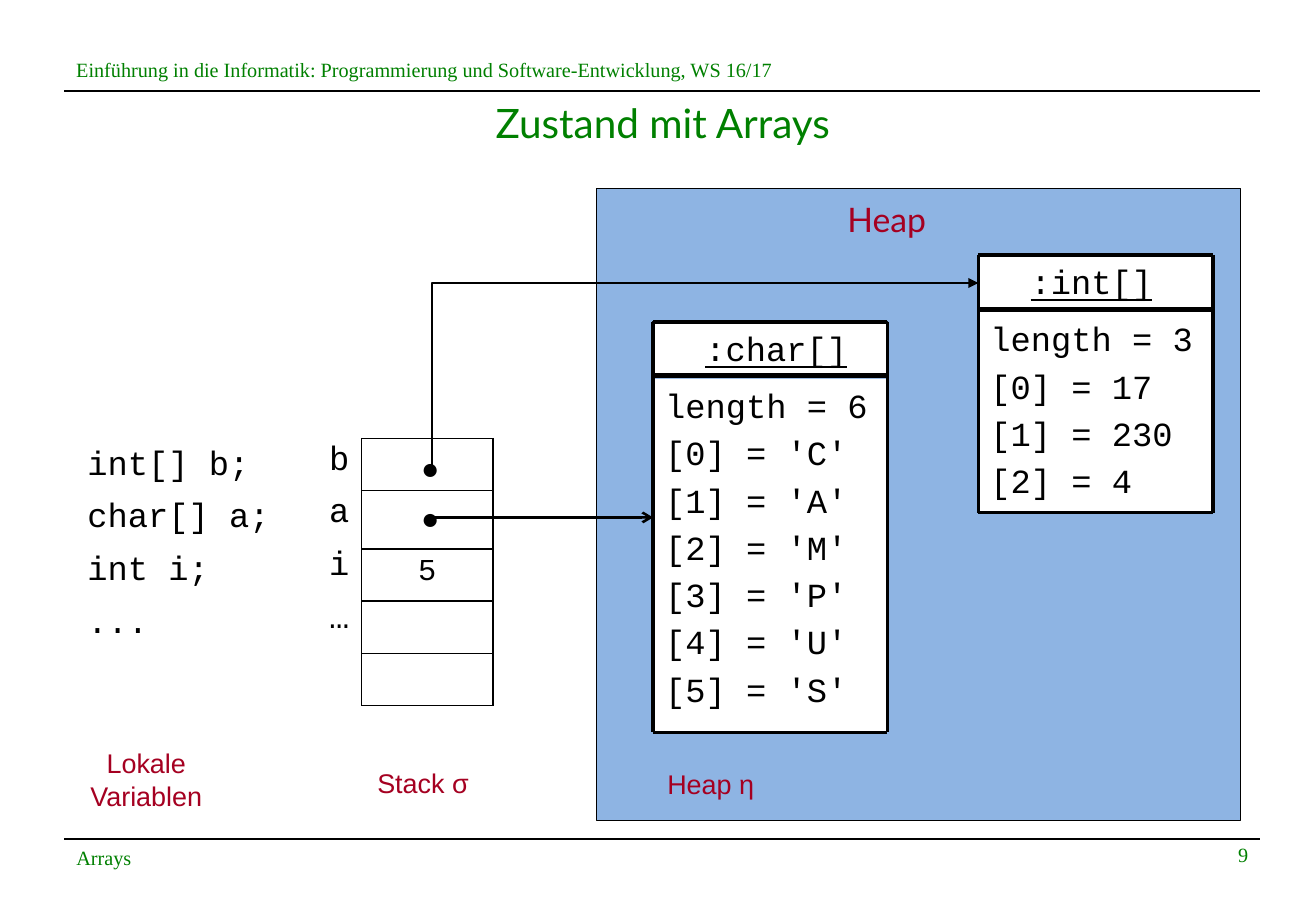
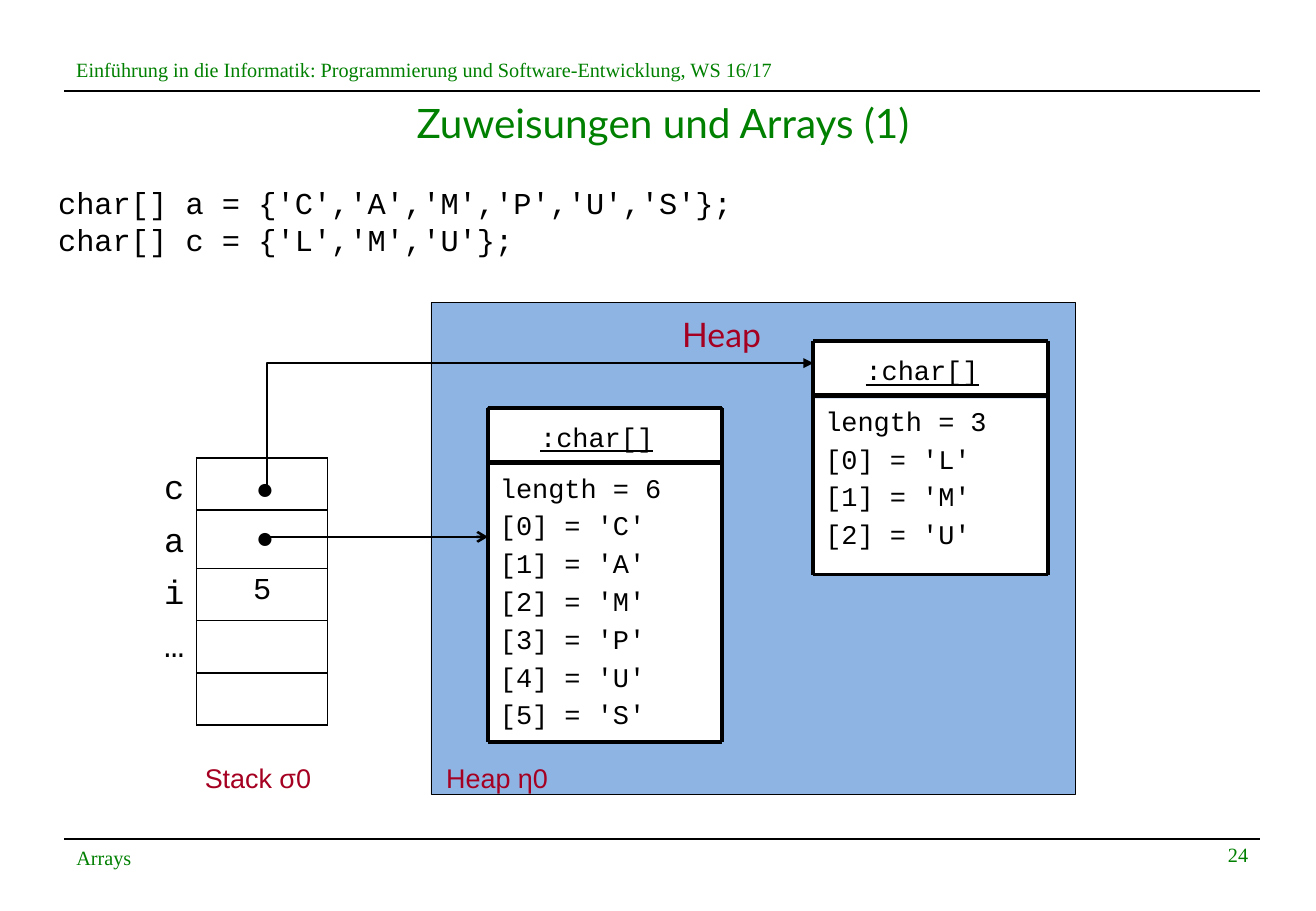
from lxml.etree import SubElement
from pptx import Presentation
from pptx.dml.color import RGBColor
from pptx.enum.shapes import MSO_CONNECTOR as Connector, MSO_SHAPE as Shape
from pptx.enum.text import MSO_ANCHOR as Anchor, PP_ALIGN as Align
from pptx.oxml.ns import qn
from pptx.util import Inches, Pt

GREEN, RED, BLUE, BLACK, WHITE = "008000", "A50021", "8EB4E3", "000000", "FFFFFF"
CODE, SANS, SERIF, DISPLAY = "Courier New", "Arial", "Times New Roman", "Lato"
COURSE = "Einführung in die Informatik: Programmierung und Software-Entwicklung, WS 16/17"
NO_STYLE = "{2D5ABB26-0587-4C30-8999-92F81FD0307C}"
ROW = 0.43
ARRAY_WIDTH = 1.93


def color(value):
    return RGBColor.from_string(value)


def write(frame, lines, font, size, ink=BLACK, align=Align.LEFT, before=0, underline=None):
    for index, line in enumerate(lines):
        paragraph = frame.paragraphs[0] if index == 0 else frame.add_paragraph()
        paragraph.alignment = align
        if before:
            properties = paragraph._p.get_or_add_pPr()
            spacing = SubElement(properties, qn("a:spcBef"))
            SubElement(spacing, qn("a:spcPct"), val=str(before * 1000))
        run = paragraph.add_run()
        run.text = line
        run.font.name = font
        run.font.size = Pt(size)
        run.font.underline = underline
        run.font.color.rgb = color(ink)


def add_text(slide, box, lines, font, size, ink=BLACK, inset=0.05, anchor=Anchor.TOP,
             wrap=True, **style):
    frame = slide.shapes.add_textbox(*map(Inches, box)).text_frame
    frame.word_wrap = wrap
    frame.margin_top = frame.margin_bottom = Inches(inset)
    frame.vertical_anchor = anchor
    write(frame, lines, font, size, ink, **style)


def add_caption(slide, left, top, lines, font=SANS, size=16, height=0.27):
    add_text(slide, (left, top, 1.33, height), lines, font, size, RED,
             inset=0, align=Align.CENTER)


def add_box(slide, box, fill, line_width=None):
    shape = slide.shapes.add_shape(Shape.RECTANGLE, *map(Inches, box))
    shape.shadow.inherit = False
    shape.fill.solid()
    shape.fill.fore_color.rgb = color(fill)
    if line_width:
        shape.line.color.rgb = color(BLACK)
        shape.line.width = Pt(line_width)
    else:
        shape.line.fill.background()
    shape.text_frame.vertical_anchor = Anchor.TOP
    return shape


def add_line(slide, start, end, width, head=None, kind=Connector.STRAIGHT):
    line = slide.shapes.add_connector(kind, *map(Inches, (*start, *end)))
    line.line.color.rgb = color(BLACK)
    line.line.width = Pt(width)
    if head:
        SubElement(line.line._get_or_add_ln(), qn("a:tailEnd"), type=head)
    SubElement(line._element.spPr, qn("a:effectLst"))
    return line


def add_column(slide, left, top, width, rows, texts, size, align=Align.LEFT, bordered=False):
    box = map(Inches, (left, top, width, sum(rows)))
    table_frame = slide.shapes.add_table(len(rows), 1, *box)
    table = table_frame.table
    table.first_row = table.horz_banding = False
    table._tbl.tblPr.find(qn("a:tableStyleId")).text = NO_STYLE
    for index, (height, text) in enumerate(zip(rows, texts)):
        table.rows[index].height = Inches(height)
        cell = table.cell(index, 0)
        if bordered:
            for side in ("lnL", "lnR", "lnT", "lnB"):
                border = SubElement(cell._tc.get_or_add_tcPr(), qn("a:" + side), w=str(Pt(1)))
                fill = SubElement(border, qn("a:solidFill"))
                SubElement(fill, qn("a:srgbClr"), val=BLACK)
        cell.fill.background()
        if text:
            write(cell.text_frame, [text], CODE, size, align=align, before=20)


def add_array(slide, left, top, height, size, kind, values):
    header_height, body_top = 0.43, 0.47
    right, bottom = left + ARRAY_WIDTH, top + height
    body = add_box(slide, (left, top + body_top, ARRAY_WIDTH, height - body_top), WHITE)
    lines = [f"length = {len(values)}"]
    lines += [f"[{index}] = {value}" for index, value in enumerate(values)]
    write(body.text_frame, lines, CODE, size, before=20)
    header = add_box(slide, (left, top, ARRAY_WIDTH, header_height), WHITE, 0.75)
    header.text_frame.margin_left = Inches(0.43)
    header.text_frame.margin_top = Inches(0.05 + (20 - size) * 0.0125)
    write(header.text_frame, [f":{kind}[]"], CODE, size, before=20, underline=True)
    for y in (top, top + 0.45, bottom):
        add_line(slide, (left, y), (right, y), 2.25)
    for x in (left, right):
        add_line(slide, (x, top), (x, bottom), 2.25)


def add_stack(slide, left, top, names, names_shift):
    add_column(slide, left, top, 1.08, [ROW, 0.48, ROW, ROW, ROW],
               ["", "", "5", "", ""], 18, Align.CENTER, bordered=True)
    add_column(slide, left - 0.53, top + names_shift, 0.69, [ROW] * 5,
               [*names, ""], 20, Align.CENTER)


def add_heap(slide, left, top, height, first_top, size, arrays):
    add_box(slide, (left, top, 5.31, height), BLUE, 0.25)
    add_caption(slide, left + 1.73, top + 0.09, ["Heap"], DISPLAY, 20, 0.34)
    for index, (shift, array_height, kind, values) in enumerate(arrays):
        add_array(slide, left + shift, top + first_top + index * 0.55,
                  array_height, size, kind, values)


def add_references(slide, stack_left, stack_top, far_end, near_left):
    x = stack_left + 0.58
    near_y = stack_top + 0.65
    add_line(slide, (x, near_y), (near_left, near_y), 1.5, "arrow")
    for dot_top in (0.04, 0.45):
        add_text(slide, (stack_left + 0.39, stack_top + dot_top, 0.39, 0.4),
                 ["●"], SANS, 18, wrap=False)
    elbow = add_line(slide, (x, stack_top + 0.24), far_end, 1.5, "triangle", Connector.ELBOW)
    guides = elbow._element.spPr.find(qn("a:prstGeom")).get_or_add_avLst()
    SubElement(guides, qn("a:gd"), name="adj1", fmla="val 0")


def add_memory(slide, stack_left, stack_top, names, names_shift, heap_top, heap_height,
               first_top, far_shift, size, arrays):
    heap_left = stack_left + 1.93
    far, near = arrays
    add_stack(slide, stack_left, stack_top, names, names_shift)
    add_heap(slide, heap_left, heap_top, heap_height, first_top, size, arrays)
    far_end = (heap_left + far[0], heap_top + first_top + far_shift)
    add_references(slide, stack_left, stack_top, far_end, heap_left + near[0])


def add_page(presentation, title, number):
    slide = presentation.slides.add_slide(presentation.slide_layouts[6])
    for y in (0.75, 6.91):
        add_line(slide, (0.53, y), (10.38, y), 1)
    add_text(slide, (0.53, 0.42, 7, 0.31), [COURSE], SERIF, 12, GREEN)
    add_text(slide, (0.54, 0.76, 9.84, 0.55), [title], DISPLAY, 24, GREEN, align=Align.CENTER)
    add_text(slide, (0.53, 6.92, 3.55, 0.29), ["Arrays"], SERIF, 12, GREEN, anchor=Anchor.BOTTOM)
    add_text(slide, (7.78, 6.66, 2.6, 0.52), [str(number)], SERIF, 12, GREEN,
             anchor=Anchor.BOTTOM, align=Align.RIGHT)
    return slide


def add_state_slide(presentation, campus):
    slide = add_page(presentation, "Zustand mit Arrays", 9)
    add_column(slide, 0.62, 3.63, 1.89, [ROW] * 5,
               ["int[] b;", "char[] a;", "int i;", "...", ""], 20)
    arrays = [(3.15, 2.12, "int", ["17", "230", "4"]), (0.47, 3.38, "char", campus)]
    add_memory(slide, 2.98, 3.61, "bai…", -0.02, 1.55, 5.2, 0.55, 0.23, 20, arrays)
    add_caption(slide, 0.54, 6.15, ["Lokale", "Variablen"], height=0.53)
    add_caption(slide, 2.82, 6.31, ["Stack σ"])
    add_caption(slide, 5.19, 6.32, ["Heap η"])


def add_assignment_slide(presentation, campus):
    slide = add_page(presentation, "Zuweisungen und Arrays (1)", 24)
    letters = ["'L'", "'M'", "'U'"]
    declarations = [f"char[] {name} = {{{','.join(values)}}};"
                    for name, values in (("a", campus), ("c", letters))]
    add_text(slide, (0.38, 1.47, 9.92, 0.71), declarations, CODE, 18)
    arrays = [(3.15, 1.92, "char", letters), (0.47, 2.75, "char", campus)]
    add_memory(slide, 1.62, 3.77, "cai…", 0.06, 2.49, 4.05, 0.32, 0.18, 16, arrays)
    add_caption(slide, 1.46, 6.27, ["Stack σ0"])
    add_caption(slide, 3.43, 6.27, ["Heap η0"])


def main():
    presentation = Presentation()
    presentation.slide_width = Inches(10.84)
    presentation.slide_height = Inches(7.5)
    campus = [f"'{letter}'" for letter in "CAMPUS"]
    add_state_slide(presentation, campus)
    add_assignment_slide(presentation, campus)
    presentation.save("out.pptx")


if __name__ == "__main__":
    main()
